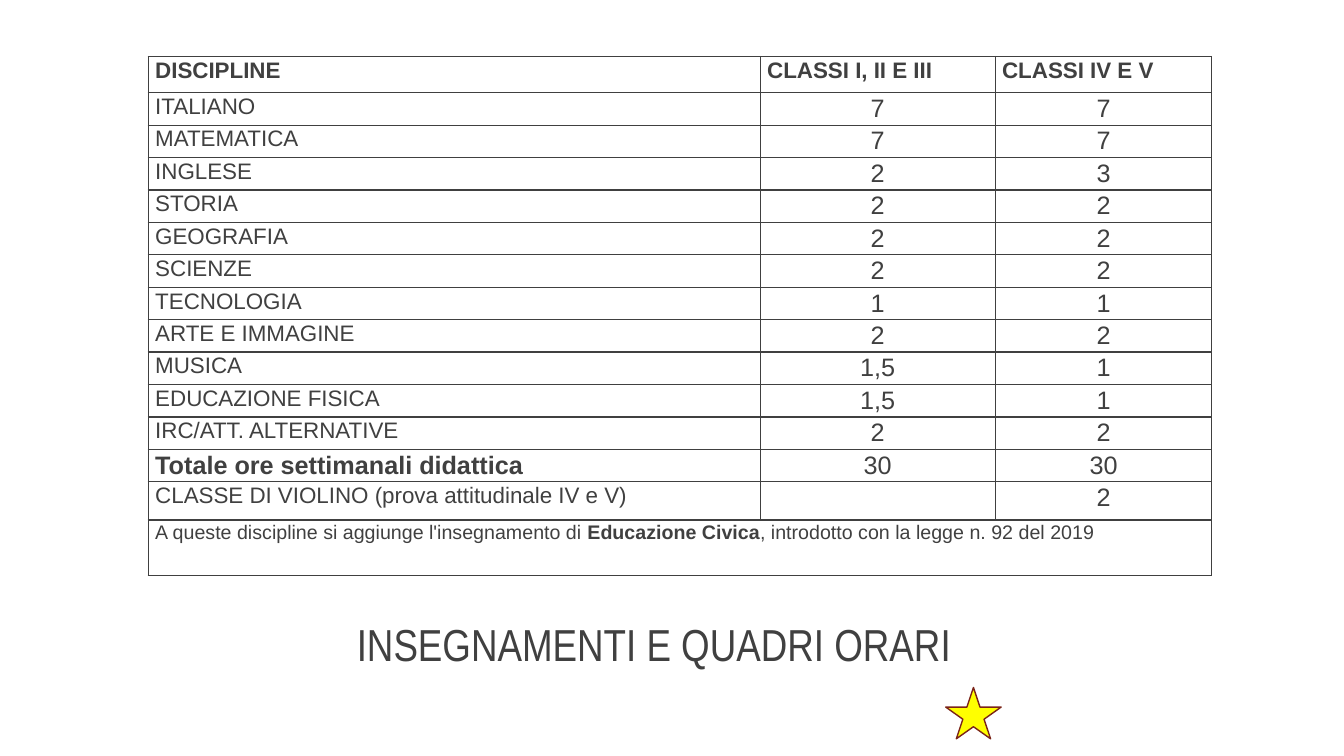
"""Build the slide with the weekly hours of each school subject."""
from lxml import etree
from pptx import Presentation
from pptx.dml.color import RGBColor
from pptx.enum.shapes import MSO_SHAPE
from pptx.enum.text import MSO_ANCHOR, PP_ALIGN
from pptx.oxml.ns import qn
from pptx.util import Inches, Pt

STAR = MSO_SHAPE.STAR_5_POINT
BOTTOM = MSO_ANCHOR.BOTTOM
LEFT, CENTER = PP_ALIGN.LEFT, PP_ALIGN.CENTER
INK, WHITE = "404040", "FFFFFF"


def color(code):
    return RGBColor.from_string(code)


def style(para, size, face="Arial", space=1.07):
    para.line_spacing = space
    para.font.size = Pt(size)
    para.font.name = face
    para.font.color.rgb = color(INK)


deck = Presentation()
deck.slide_width, deck.slide_height = Inches(13.33), Inches(7.5)
slide = deck.slides.add_slide(deck.slide_layouts[6])

title = slide.shapes.add_textbox(Inches(3.44), Inches(5.88), Inches(6.22), Inches(0.83))
frame = title.text_frame
frame.word_wrap = True
frame.vertical_anchor = BOTTOM
frame.text = "INSEGNAMENTI E QUADRI ORARI"
style(frame.paragraphs[0], 32, "Arial Narrow", 0.9)

star = slide.shapes.add_shape(STAR, Inches(9.38), Inches(6.82), Inches(0.55), Inches(0.51))
star.shadow.inherit = False
star.fill.solid()
star.fill.fore_color.rgb = color("FFFF00")
star.line.color.rgb = color("7B2418")
star.line.width = Pt(1)

rows = [
    ("DISCIPLINE", "CLASSI I, II E III", "CLASSI IV E V"),
    ("ITALIANO", "7", "7"),
    ("MATEMATICA", "7", "7"),
    ("INGLESE", "2", "3"),
    ("STORIA", "2", "2"),
    ("GEOGRAFIA", "2", "2"),
    ("SCIENZE", "2", "2"),
    ("TECNOLOGIA", "1", "1"),
    ("ARTE E IMMAGINE", "2", "2"),
    ("MUSICA", "1,5", "1"),
    ("EDUCAZIONE FISICA", "1,5", "1"),
    ("IRC/ATT. ALTERNATIVE", "2", "2"),
    ("Totale ore settimanali didattica", "30", "30"),
    ("CLASSE DI VIOLINO (prova attitudinale IV e V)", "", "2"),
    ("", "", ""),
]
note = [
    ("A queste discipline si aggiunge l'insegnamento di ", False),
    ("Educazione Civica", True),
    (", introdotto con la legge n. 92 del 2019", False),
]
last = len(rows) - 1
total = last - 2
wide, high = 10.55, 5.15
head, violin, foot = 0.36, 0.38, 0.55
step = (high - head - violin - foot) / total

frame = slide.shapes.add_table(len(rows), 3, Inches(1.47), Inches(0.56), Inches(wide), Inches(high))
table = frame.table
table.first_row = table.horz_banding = False
for col, width in zip(table.columns, (6.07, 2.33, 2.15)):
    col.width = Inches(width)
for row, height in zip(table.rows, [head] + [step] * total + [violin, foot]):
    row.height = Inches(height)

for r, texts in enumerate(rows):
    for c, text in enumerate(texts):
        cell = table.cell(r, c)
        cell.margin_left = cell.margin_right = Inches(0.07)
        cell.margin_top = cell.margin_bottom = 0
        props = cell._tc.get_or_add_tcPr()
        for side in ("lnL", "lnR", "lnT", "lnB"):
            line = etree.SubElement(props, qn("a:" + side), w=str(Pt(1)))
            fill = etree.SubElement(line, qn("a:solidFill"))
            etree.SubElement(fill, qn("a:srgbClr"), val=INK)
        cell.fill.solid()
        cell.fill.fore_color.rgb = color(WHITE)
        cell.text = text
        para = cell.text_frame.paragraphs[0]
        big = r > 0 and c > 0 or r == total
        style(para, 14 if r == last else 18 if big else 16)
        para.space_after = Pt(8)
        para.alignment = CENTER if r > 0 and c > 0 else LEFT
        if r < last:
            para.font.bold = r == 0 or (r == total and c == 0)

table.cell(last, 0).merge(table.cell(last, 2))
para = table.cell(last, 0).text_frame.paragraphs[0]
for text, bold in note:
    run = para.add_run()
    run.text = text
    run.font.bold = bold

deck.save("out.pptx")
